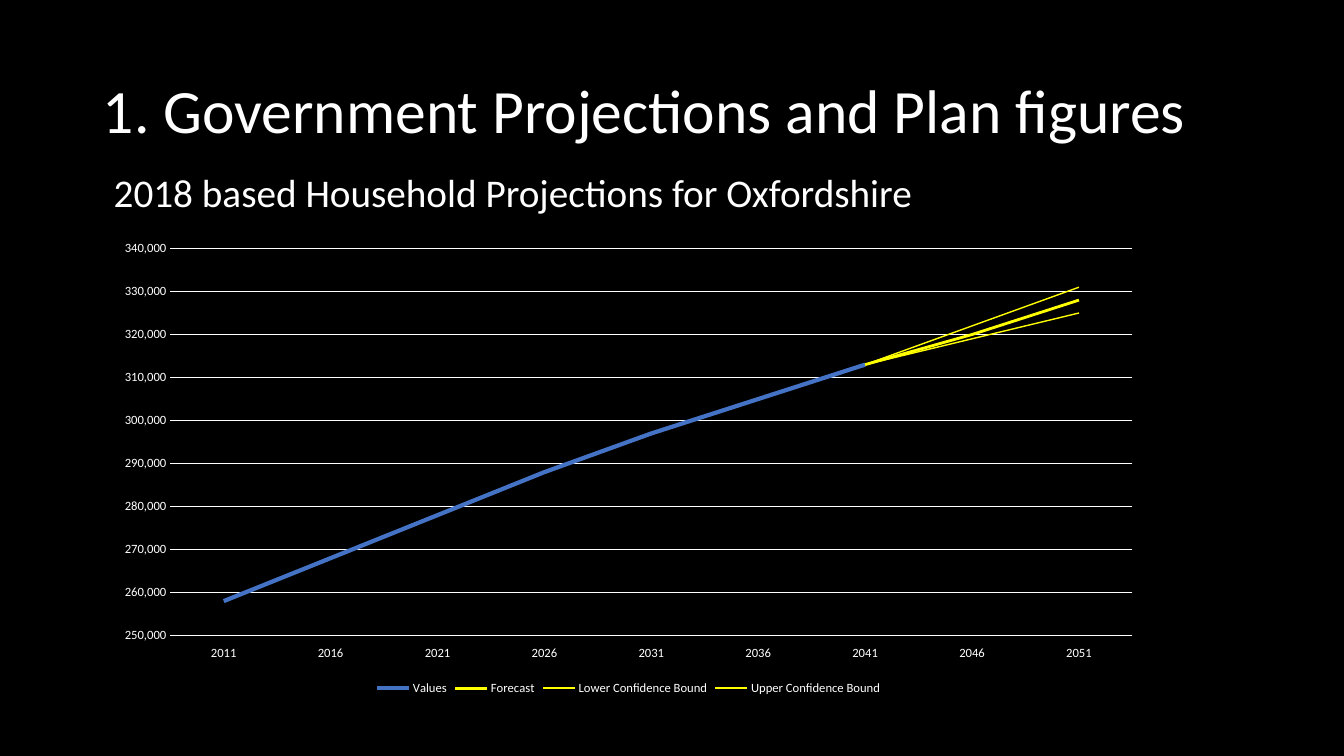
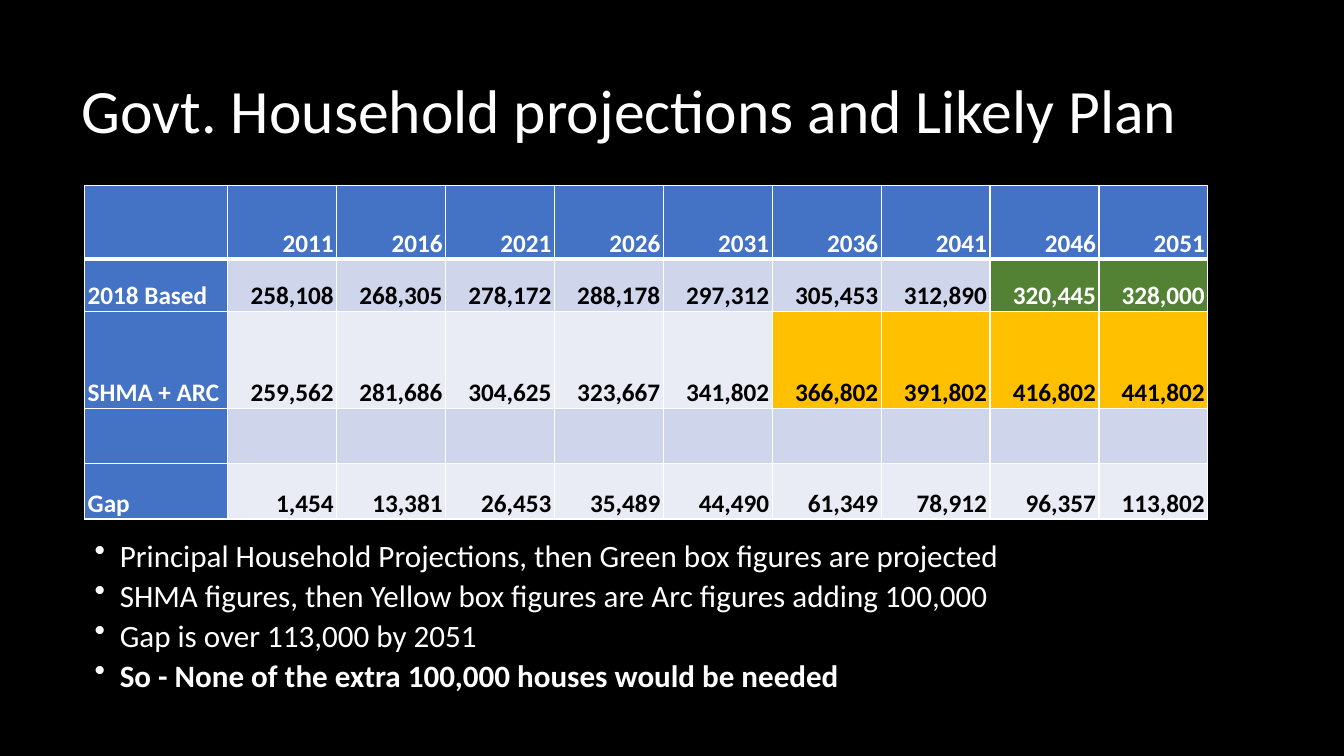
"""Build two slides on household projections and likely plan figures."""
from dataclasses import dataclass

from lxml import etree
from pptx import Presentation
from pptx import util as u
from pptx.chart import data as chart_data
from pptx.dml.color import RGBColor
from pptx.enum import chart as chart_enum
from pptx.enum import text
from pptx.oxml import ns


@dataclass(frozen=True)
class Theme:
    """Colours, font and type sizes shared by the slides."""

    font: str = "Calibri"
    black: str = "000000"
    white: str = "FFFFFF"
    blue: str = "4472C4"
    band_dark: str = "CFD5EA"
    band_light: str = "E9EBF5"
    green: str = "548235"
    amber: str = "FFC000"
    yellow: str = "FFFF00"
    title: float = 44
    subtitle: float = 28
    bullet: float = 22.2
    table: float = 18
    chart: float = 10
    axis: float = 9


THEME = Theme()
YEARS = [str(year) for year in range(2011, 2052, 5)]
PROJECTED = [258108, 268305, 278172, 288178, 297312, 305453, 312890, 320445, 328000]
PLANNED = [259562, 281686, 304625, 323667, 341802, 366802, 391802, 416802, 441802]
FIRST_ARC = YEARS.index("2036")
LAST_OFFICIAL = YEARS.index("2041")
BULLETS = [
    ("Principal Household Projections, then Green box figures are projected", False),
    ("SHMA figures, then Yellow box figures are Arc figures adding 100,000", False),
    ("Gap is over 113,000 by 2051", False),
    ("So - None of the extra 100,000 houses would be needed", True),
]


def rgb(colour):
    """Turn a hex string into a colour."""
    return RGBColor.from_string(colour)


def style_font(font, size, colour=THEME.white, bold=False):
    """Apply the theme font with a size, colour and weight."""
    font.name = THEME.font
    font.size = u.Pt(size)
    font.bold = bold
    font.color.rgb = rgb(colour)


def style_line(line, colour, width):
    """Set the colour and width of a line."""
    line.color.rgb = rgb(colour)
    line.width = u.Pt(width)


def add_run(para, words, size, colour=THEME.white, bold=False):
    """Add one formatted run to a paragraph."""
    span = para.add_run()
    span.text = words
    style_font(span.font, size, colour, bold)


def add_page(deck, title, left):
    """Add a black title-only page with its title."""
    page = deck.slides.add_slide(deck.slide_layouts[5])
    page.background.fill.solid()
    page.background.fill.fore_color.rgb = rgb(THEME.black)
    box = page.shapes.title
    box.left, box.top = u.Inches(left), u.Inches(0.4)
    box.width, box.height = u.Inches(11.5), u.Inches(1.45)
    frame = box.text_frame
    frame.auto_size = text.MSO_AUTO_SIZE.NONE
    frame.vertical_anchor = text.MSO_ANCHOR.MIDDLE
    para = frame.paragraphs[0]
    para.alignment = text.PP_ALIGN.LEFT
    para.line_spacing = 0.9
    add_run(para, title, THEME.title)
    return page


def add_bullet(para):
    """Give a paragraph a hanging round bullet."""
    props = para._p.get_or_add_pPr()
    indent = u.Inches(0.25)
    props.set("marL", str(indent))
    props.set("indent", str(-indent))
    etree.SubElement(props, ns.qn("a:buChar")).set("char", "•")


def add_text(page, bounds, lines, size, spacing, bulleted=False):
    """Add a wrapped text box from pairs of words and boldness."""
    box = page.shapes.add_textbox(*map(u.Inches, bounds))
    frame = box.text_frame
    frame.word_wrap = True
    for index, (words, bold) in enumerate(lines):
        para = frame.add_paragraph() if index else frame.paragraphs[0]
        para.line_spacing = spacing
        para.space_before = u.Pt(10)
        if bulleted:
            add_bullet(para)
        add_run(para, words, size, bold=bold)


def projection_series():
    """List each chart series as name, values, colour and line width."""
    rounded = [round(value, -3) for value in PROJECTED]
    before = [None] * LAST_OFFICIAL
    after = [None] * (len(YEARS) - LAST_OFFICIAL - 1)
    return [
        ("Values", rounded[:LAST_OFFICIAL + 1] + after, THEME.blue, 3),
        ("Forecast", before + rounded[LAST_OFFICIAL:], THEME.yellow, 2),
        ("Lower Confidence Bound", before + [313000, 319000, 325000], THEME.yellow, 1),
        ("Upper Confidence Bound", before + [313000, 322000, 331000], THEME.yellow, 1),
    ]


def style_axes(chart):
    """Format the year axis, the value axis and the gridlines."""
    for axis in (chart.category_axis, chart.value_axis):
        axis.major_tick_mark = chart_enum.XL_TICK_MARK.NONE
        axis.minor_tick_mark = chart_enum.XL_TICK_MARK.NONE
        style_font(axis.tick_labels.font, THEME.axis)
    years, values = chart.category_axis, chart.value_axis
    years.tick_label_position = chart_enum.XL_TICK_LABEL_POSITION.LOW
    style_line(years.format.line, THEME.white, 0.75)
    values.minimum_scale, values.maximum_scale = 250000, 340000
    values.major_unit = 10000
    values.format.line.fill.background()
    values.tick_labels.number_format = "#,##0"
    values.tick_labels.number_format_is_linked = False
    values.has_major_gridlines = True
    style_line(values.major_gridlines.format.line, THEME.white, 0.75)


def add_projection_chart(page, bounds):
    """Add the line chart of projections and their forecast range."""
    rows = projection_series()
    figures = chart_data.CategoryChartData(number_format="#,##0")
    figures.categories = YEARS
    for name, values, _, _ in rows:
        figures.add_series(name, values)
    chart = page.shapes.add_chart(
        chart_enum.XL_CHART_TYPE.LINE, *map(u.Inches, bounds), figures).chart
    style_font(chart.font, THEME.chart)
    chart.has_title = False
    chart.has_legend = True
    chart.legend.position = chart_enum.XL_LEGEND_POSITION.BOTTOM
    chart.legend.include_in_layout = False
    style_font(chart.legend.font, THEME.axis)
    style_axes(chart)
    plot = chart.plots[0]
    plot.vary_by_categories = False
    for series, (_, _, colour, width) in zip(plot.series, rows):
        series.smooth = False
        series.marker.style = chart_enum.XL_MARKER_STYLE.NONE
        style_line(series.format.line, colour, width)


def add_borders(cell, bottom):
    """Draw white borders around a cell with a chosen bottom width."""
    props = cell._tc.get_or_add_tcPr()
    for side, width in (("L", 1), ("R", 1), ("T", 1), ("B", bottom)):
        line = etree.SubElement(props, ns.qn(f"a:ln{side}"), w=str(u.Pt(width)))
        fill = etree.SubElement(line, ns.qn("a:solidFill"))
        etree.SubElement(fill, ns.qn("a:srgbClr"), val=THEME.white)


def cell_colours(row, column):
    """Choose the fill and text colour of a table cell."""
    if row == 0 or column == 0:
        return THEME.blue, THEME.white
    if row == 1 and column - 1 > LAST_OFFICIAL:
        return THEME.green, THEME.white
    if row == 2 and column - 1 >= FIRST_ARC:
        return THEME.amber, THEME.black
    return (THEME.band_dark if row % 2 else THEME.band_light), THEME.black


def fill_cell(cell, words, row, column):
    """Write and format one table cell."""
    fill, colour = cell_colours(row, column)
    add_borders(cell, 1 if row else 3)
    cell.fill.solid()
    cell.fill.fore_color.rgb = rgb(fill)
    cell.vertical_anchor = text.MSO_ANCHOR.BOTTOM
    cell.margin_left = cell.margin_right = u.Inches(0.03)
    cell.margin_top = cell.margin_bottom = 0
    para = cell.text_frame.paragraphs[0]
    para.line_spacing = 1.07
    para.alignment = text.PP_ALIGN.RIGHT if column else text.PP_ALIGN.LEFT
    if words:
        add_run(para, words, THEME.table, colour, bold=True)


def number_row(label, values):
    """Put a label before values with thousands separators."""
    return [label] + [f"{value:,}" for value in values]


def add_gap_table(page, left, top):
    """Add the table comparing projections with plan figures."""
    gaps = [plan - need for plan, need in zip(PLANNED, PROJECTED)]
    rows = [
        [""] + YEARS,
        number_row("2018 Based", PROJECTED),
        number_row("SHMA + ARC", PLANNED),
        [""] * (len(YEARS) + 1),
        number_row("Gap", gaps),
    ]
    widths = [1.42] + [1.08] * len(YEARS)
    heights = [0.73, 0.52, 0.96, 0.55, 0.55]
    bounds = (left, top, sum(widths), sum(heights))
    table = page.shapes.add_table(
        len(rows), len(widths), *map(u.Inches, bounds)).table
    for column, width in zip(table.columns, widths):
        column.width = u.Inches(width)
    for row, height in zip(table.rows, heights):
        row.height = u.Inches(height)
    for row, entries in enumerate(rows):
        for column, words in enumerate(entries):
            fill_cell(table.cell(row, column), words, row, column)


def main():
    """Build and save the deck."""
    deck = Presentation()
    deck.slide_width, deck.slide_height = u.Inches(13.33), u.Inches(7.5)

    page = add_page(deck, "1. Government Projections and Plan figures", 0.92)
    subtitle = [("2018 based Household Projections for Oxfordshire", False)]
    add_text(page, (1.03, 1.71, 11.5, 0.49), subtitle, THEME.subtitle, 0.8)
    add_projection_chart(page, (1.03, 2.3, 10.41, 4.64))

    page = add_page(deck, "Govt. Household projections and Likely Plan", 0.71)
    add_gap_table(page, 0.84, 1.84)
    add_text(page, (0.84, 5.37, 11.5, 1.7), BULLETS, THEME.bullet, 0.7, bulleted=True)

    deck.save("out.pptx")


if __name__ == "__main__":
    main()
